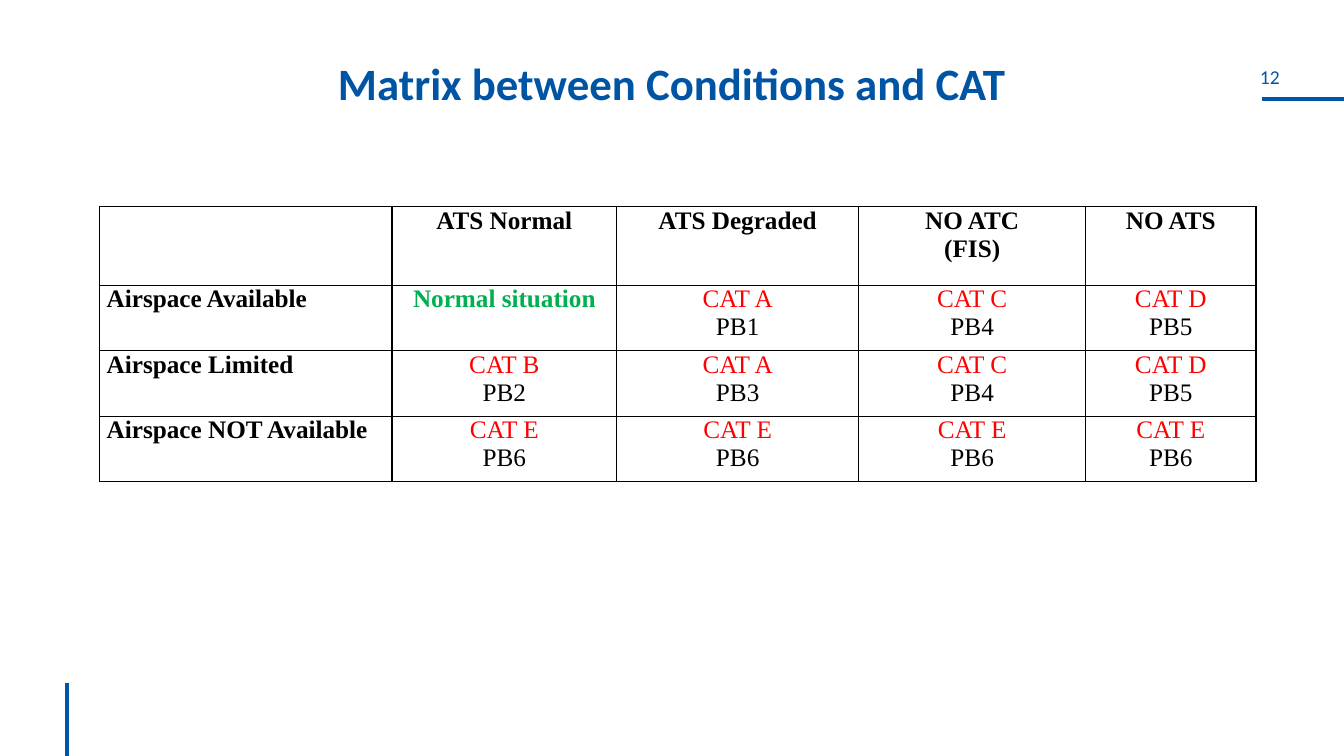
from dataclasses import dataclass

from lxml.etree import SubElement
from pptx import Presentation
from pptx.dml.color import RGBColor as RGB
from pptx.enum.shapes import MSO_CONNECTOR as CONNECTOR
from pptx.enum.text import MSO_ANCHOR as ANCHOR, MSO_AUTO_SIZE as AUTO_SIZE, PP_ALIGN as ALIGN
from pptx.oxml.ns import qn
from pptx.slide import Slide
from pptx.table import _Cell as Cell
from pptx.util import Cm, Pt

COLORS = {
    "rule": "0055A5",
    "title": "0054A4",
    "text": "000000",
    "normal": "00B050",
    "cat": "FF0000",
}
COL_WIDTHS = [7.37, 5.66, 6.1, 5.72, 4.29]
ROW_HEIGHTS = [1.98, 1.65, 1.65, 1.65]


@dataclass
class Rule:
    x1: float
    y1: float
    x2: float
    y2: float


@dataclass
class Line:
    text: str
    color: str = "text"
    bold: bool = False


def heading(*texts: str) -> list[Line]:
    return [Line(text, bold=True) for text in texts]


def category(letter: str, number: int) -> list[Line]:
    return [Line(f"CAT {letter}", "cat"), Line(f"PB{number}")]


RULES = [Rule(31.8, 2.49, 33.87, 2.49), Rule(1.68, 17.2, 1.68, 19.05)]
MATRIX = [
    [[], heading("ATS Normal"), heading("ATS Degraded"),
     heading("NO ATC", "(FIS)"), heading("NO ATS")],
    [heading("Airspace Available"), [Line("Normal situation", "normal", True)],
     category("A", 1), category("C", 4), category("D", 5)],
    [heading("Airspace Limited"), category("B", 2),
     category("A", 3), category("C", 4), category("D", 5)],
    [heading("Airspace NOT Available")] + [category("E", 6)] * 4,
]


def set_font(font, name: str, size: float, color: str, bold: bool) -> None:
    font.name, font.size, font.bold = name, Pt(size), bold
    font.color.rgb = RGB.from_string(COLORS[color])


def draw_rule(slide: Slide, rule: Rule) -> None:
    sp = slide.shapes.add_connector(
        CONNECTOR.STRAIGHT, Cm(rule.x1), Cm(rule.y1), Cm(rule.x2), Cm(rule.y2))
    sp.line.color.rgb = RGB.from_string(COLORS["rule"])
    sp.line.width = Pt(3)
    SubElement(sp._element.spPr, qn("a:effectLst"))


def draw_page_number(slide: Slide, number: int) -> None:
    sp = slide.shapes.add_textbox(Cm(30.48), Cm(1.63), Cm(3.05), Cm(0.84))
    tf = sp.text_frame
    tf.word_wrap = False
    tf.margin_left = tf.margin_right = tf.margin_top = tf.margin_bottom = 0
    tf.text = str(number)
    p = tf.paragraphs[0]
    p.alignment = ALIGN.CENTER
    set_font(p.runs[0].font, "Calibri", 14, "rule", False)


def draw_title(slide: Slide, text: str) -> None:
    sp = slide.shapes.title
    sp.left, sp.top, sp.width, sp.height = Cm(0), Cm(1.42), Cm(33.87), Cm(1.85)
    tf = sp.text_frame
    tf.text = text
    tf.word_wrap = True
    tf.auto_size = AUTO_SIZE.NONE
    tf.vertical_anchor = ANCHOR.TOP
    p = tf.paragraphs[0]
    p.alignment = ALIGN.CENTER
    p.line_spacing = 0.9
    set_font(p.runs[0].font, "Calibri", 32, "title", True)


def set_borders(cell: Cell) -> None:
    tc_pr = cell._tc.get_or_add_tcPr()
    for side in ("lnL", "lnR", "lnT", "lnB"):
        ln = SubElement(tc_pr, qn(f"a:{side}"), w=str(Pt(1)))
        fill = SubElement(ln, qn("a:solidFill"))
        SubElement(fill, qn("a:srgbClr"), val=COLORS["text"])


def fill_cell(cell: Cell, lines: list[Line], align: ALIGN) -> None:
    set_borders(cell)
    cell.fill.background()
    cell.margin_left = cell.margin_right = Cm(0.18)
    cell.margin_top = cell.margin_bottom = 0
    tf = cell.text_frame
    tf.text = "\n".join(line.text for line in lines)
    for p, line in zip(tf.paragraphs, lines):
        p.alignment = align
        set_font(p.runs[0].font, "Times New Roman", 18, line.color, line.bold)


def draw_matrix(slide: Slide) -> None:
    frame = slide.shapes.add_table(
        len(ROW_HEIGHTS), len(COL_WIDTHS), Cm(2.51), Cm(5.21),
        Cm(sum(COL_WIDTHS)), Cm(sum(ROW_HEIGHTS)))
    table = frame.table
    table.first_row = table.horz_banding = False
    for column, width in zip(table.columns, COL_WIDTHS):
        column.width = Cm(width)
    for row, height, contents in zip(table.rows, ROW_HEIGHTS, MATRIX):
        row.height = Cm(height)
        for i, (cell, lines) in enumerate(zip(row.cells, contents)):
            fill_cell(cell, lines, ALIGN.CENTER if i else ALIGN.JUSTIFY)


def main() -> None:
    prs = Presentation()
    prs.slide_width, prs.slide_height = Cm(33.87), Cm(19.05)
    slide = prs.slides.add_slide(prs.slide_layouts[5])
    for rule in RULES:
        draw_rule(slide, rule)
    draw_page_number(slide, 12)
    draw_title(slide, "Matrix between Conditions and CAT")
    draw_matrix(slide)
    prs.save("out.pptx")


if __name__ == "__main__":
    main()
